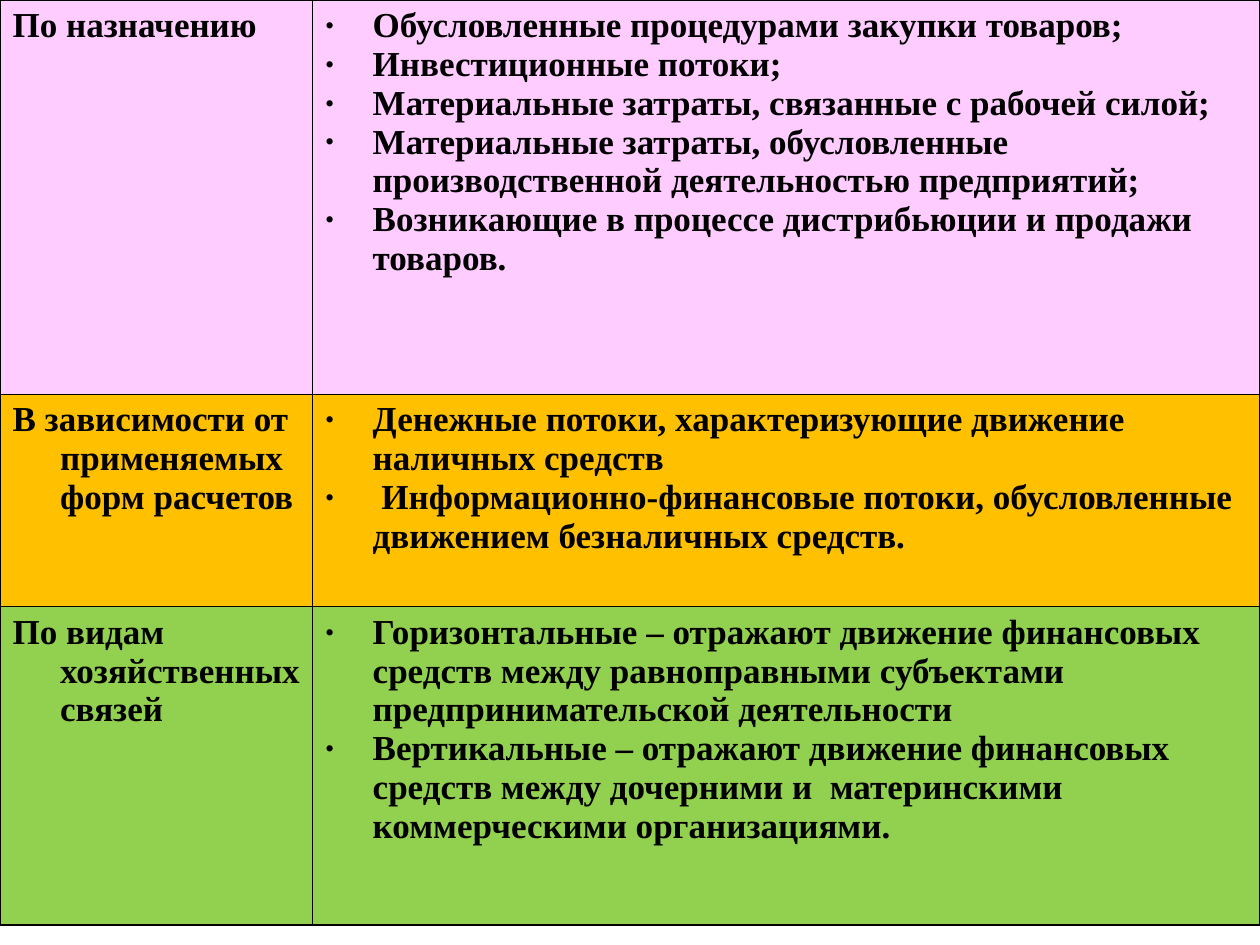
from lxml.etree import SubElement
from pptx import Presentation
from pptx.dml.color import RGBColor
from pptx.oxml.ns import qn
from pptx.util import Cm, Pt

BLACK = RGBColor(0x00, 0x00, 0x00)
PINK = RGBColor(0xFF, 0xCC, 0xFF)
AMBER = RGBColor(0xFF, 0xC0, 0x00)
GREEN = RGBColor(0x92, 0xD0, 0x50)

COL_WIDTHS = (6.3, 19.1)

# Row height, fill, classification criterion, kinds of flows
ROWS = [
    (7.95, PINK, "По назначению", [
        "Обусловленные процедурами закупки товаров;",
        "Инвестиционные потоки;",
        "Материальные затраты, связанные с рабочей силой;",
        "Материальные затраты, обусловленные производственной деятельностью предприятий;",
        "Возникающие в процессе дистрибьюции и продажи товаров.",
    ]),
    (4.28, AMBER, "В зависимости от применяемых форм расчетов", [
        "Денежные потоки, характеризующие движение наличных средств",
        " Информационно-финансовые потоки, обусловленные движением безналичных средств.",
    ]),
    (6.42, GREEN, "По видам хозяйственных связей", [
        "Горизонтальные – отражают движение финансовых средств между равноправными "
        "субъектами предпринимательской деятельности",
        "Вертикальные – отражают движение финансовых средств между дочерними и  "
        "материнскими коммерческими организациями.",
    ]),
]


def write_paragraph(p, text, *, font, size, color, bold=False, indent=0, bullet=None):
    """Fill a paragraph with one formatted run, a hanging indent and a bullet."""
    pPr = p._p.get_or_add_pPr()
    pPr.set("marL", str(Cm(indent)))
    pPr.set("indent", str(-Cm(indent)))
    if bullet:
        SubElement(pPr, qn("a:buSzPct"), val="75000")
        SubElement(pPr, qn("a:buFont"), typeface=font)
        SubElement(pPr, qn("a:buChar"), char=bullet)
    else:
        SubElement(pPr, qn("a:buNone"))
    r = p.add_run()
    r.text = text
    r.font.name = font
    r.font.size = Pt(size)
    r.font.bold = bold
    r.font.color.rgb = color


class Deck:
    """Holds the text style and the current slide."""

    def __init__(self, prs):
        self.s = prs.slides.add_slide(prs.slide_layouts[6])
        self.style = dict(font="Times New Roman", size=20, color=BLACK,
                          bold=True, indent=0.96)

    def borders(self, cell):
        tcPr = cell._tc.get_or_add_tcPr()
        for side in ("lnL", "lnR", "lnT", "lnB"):
            ln = SubElement(tcPr, qn(f"a:{side}"), w=str(Pt(1)))
            fill = SubElement(ln, qn("a:solidFill"))
            SubElement(fill, qn("a:srgbClr"), val=str(BLACK))

    def cell(self, cell, texts, fill, bullet=None):
        # Borders come before the fill in the cell properties
        self.borders(cell)
        cell.fill.solid()
        cell.fill.fore_color.rgb = fill
        tf = cell.text_frame
        for i, text in enumerate(texts):
            p = tf.add_paragraph() if i else tf.paragraphs[0]
            write_paragraph(p, text, bullet=bullet, **self.style)

    def table(self, rows, widths):
        height = sum(row[0] for row in rows)
        table = self.s.shapes.add_table(len(rows), len(widths), 0, 0,
                                        Cm(sum(widths)), Cm(height)).table
        table.first_row = table.horz_banding = False
        for column, width in zip(table.columns, widths):
            column.width = Cm(width)
        for i, (row_height, fill, criterion, kinds) in enumerate(rows):
            table.rows[i].height = Cm(row_height)
            self.cell(table.cell(i, 0), [criterion], fill)
            self.cell(table.cell(i, 1), kinds, fill, bullet="•")


def main():
    prs = Presentation()
    prs.slide_width, prs.slide_height = Cm(25.4), Cm(19.05)

    # Classification of financial flows
    Deck(prs).table(ROWS, COL_WIDTHS)

    prs.save("out.pptx")


if __name__ == "__main__":
    main()
